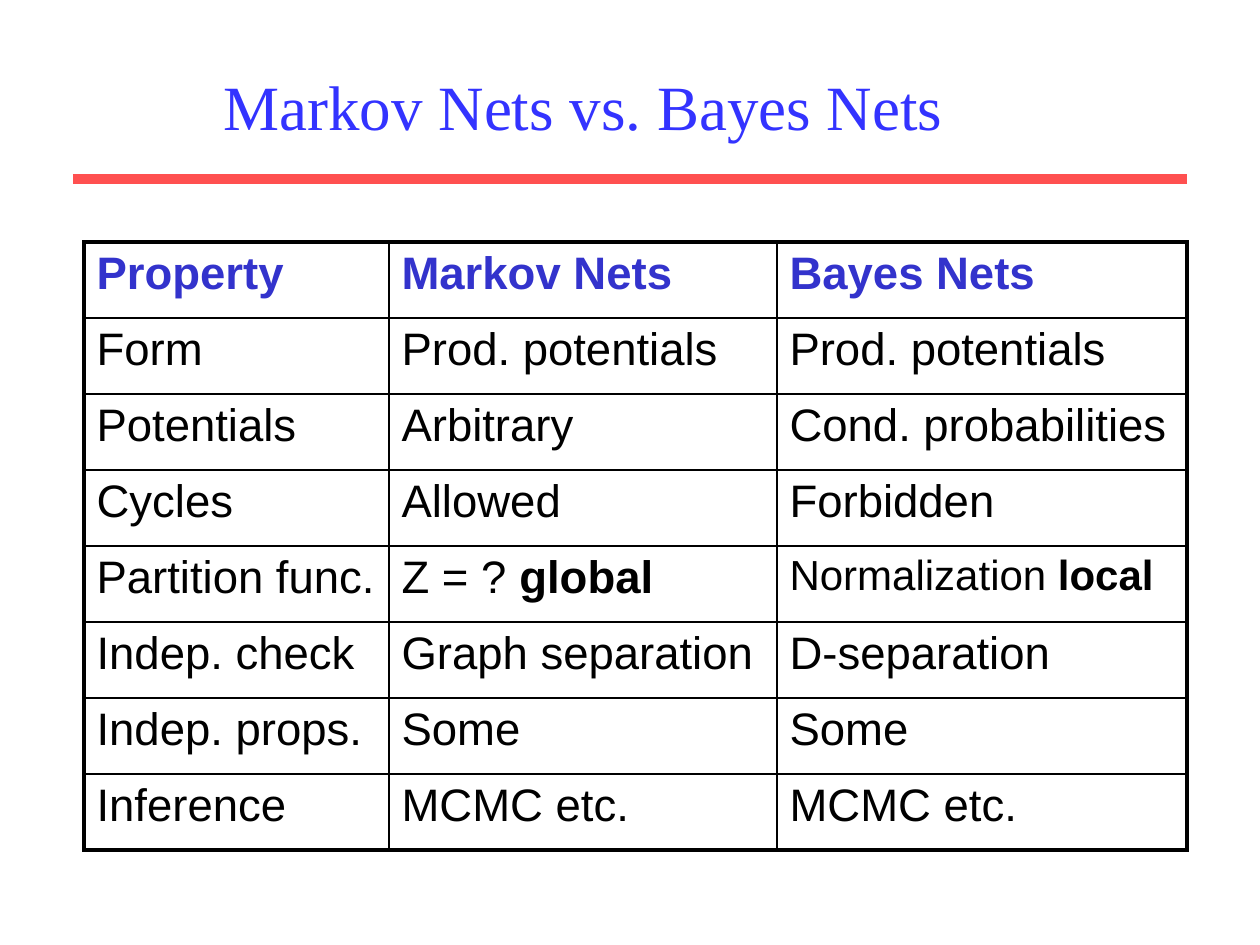
from lxml import etree
from pptx import Presentation
from pptx.dml.color import RGBColor
from pptx.enum.shapes import MSO_CONNECTOR
from pptx.enum.text import MSO_ANCHOR, PP_ALIGN
from pptx.oxml.ns import qn
from pptx.util import Emu, Pt

STRAIGHT = MSO_CONNECTOR.STRAIGHT
MIDDLE = MSO_ANCHOR.MIDDLE
CENTER = PP_ALIGN.CENTER
PX_PER_INCH = 126
COLUMN_WIDTHS = (305, 388, 410)
ROW_HEIGHT = 76
THIN, THICK = 1, 2.25

# A cell is a list of (text, bold) runs where only part of it is bold.
ROWS = [
    ("Property", "Markov Nets", "Bayes Nets"),
    ("Form", "Prod. potentials", "Prod. potentials"),
    ("Potentials", "Arbitrary", "Cond. probabilities"),
    ("Cycles", "Allowed", "Forbidden"),
    ("Partition func.", [("Z = ? ", False), ("global", True)],
     [("Normalization ", False), ("local", True)]),
    ("Indep. check", "Graph separation", "D-separation"),
    ("Indep. props.", "Some", "Some"),
    ("Inference", "MCMC etc.", "MCMC etc."),
]
SMALL_CELLS = {(4, 2)}


def px(n):
    return Emu(round(n * 914400 / PX_PER_INCH))


def rgb(color):
    return RGBColor.from_string(color)


def set_font(font, name, size, color):
    font.name, font.size = name, Pt(size)
    font.color.rgb = rgb(color)


def add_title(s, text, x, y, w, h):
    title = s.shapes.title
    title.left, title.top, title.width, title.height = map(px, (x, y, w, h))
    tf = title.text_frame
    tf.text = text
    tf.vertical_anchor = MIDDLE
    p = tf.paragraphs[0]
    p.alignment = CENTER
    set_font(p.font, "Times New Roman", 36, "3333FF")


def add_rule(s, x, y, w):
    line = s.shapes.add_connector(STRAIGHT, px(x), px(y), px(x + w), px(y))
    line.line.color.rgb = rgb("FF5050")
    line.line.width = Pt(6)
    etree.SubElement(line._element.spPr, qn("a:effectLst"))


def set_borders(cell, widths):
    """Draw black borders, with widths in points for left, right, top, bottom."""
    tc_pr = cell._tc.get_or_add_tcPr()
    for side, width in zip("LRTB", widths):
        ln = etree.SubElement(tc_pr, qn(f"a:ln{side}"), w=str(Pt(width)))
        fill = etree.SubElement(ln, qn("a:solidFill"))
        etree.SubElement(fill, qn("a:srgbClr"), val="000000")


def fill_cell(cell, content, size, header):
    p = cell.text_frame.paragraphs[0]
    set_font(p.font, "Arial", size, "3333CC" if header else "000000")
    runs = [(content, header)] if isinstance(content, str) else content
    for text, bold in runs:
        r = p.add_run()
        r.text = text
        r.font.bold = bold


def add_comparison(s, rows, x, y):
    n_rows, n_cols = len(rows), len(COLUMN_WIDTHS)
    table = s.shapes.add_table(n_rows, n_cols, px(x), px(y),
                               px(sum(COLUMN_WIDTHS)),
                               px(n_rows * ROW_HEIGHT)).table
    table.first_row = table.horz_banding = False
    for column, width in zip(table.columns, COLUMN_WIDTHS):
        column.width = px(width)
    for i, row in enumerate(rows):
        table.rows[i].height = px(ROW_HEIGHT)
        for j, content in enumerate(row):
            cell = table.cell(i, j)
            outer = (j == 0, j == n_cols - 1, i == 0, i == n_rows - 1)
            set_borders(cell, [THICK if edge else THIN for edge in outer])
            cell.fill.background()
            size = 24 if (i, j) in SMALL_CELLS else 26
            fill_cell(cell, content, size, header=i == 0)


def main():
    prs = Presentation()
    prs.slide_width, prs.slide_height = px(1260), px(945)
    s = prs.slides.add_slide(prs.slide_layouts[5])
    add_rule(s, 73, 179, 1114)
    add_title(s, "Markov Nets vs. Bayes Nets", 63, 16, 1040, 179)
    add_comparison(s, ROWS, 84, 242)
    prs.save("out.pptx")


if __name__ == "__main__":
    main()
